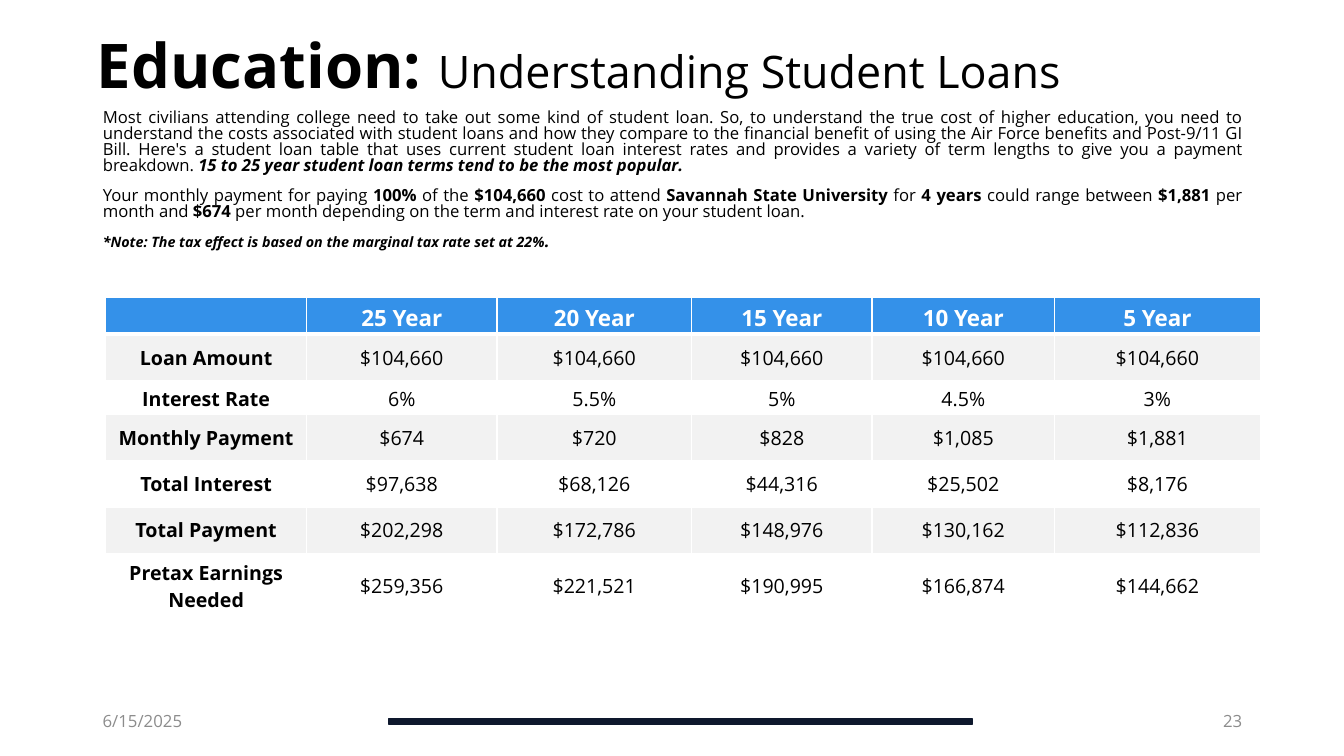
from pptx import Presentation
from pptx.dml.color import RGBColor
from pptx.enum.shapes import MSO_SHAPE
from pptx.enum.text import MSO_ANCHOR, MSO_AUTO_SIZE, PP_ALIGN
from pptx.oxml.ns import qn
from pptx.util import Inches, Pt
from lxml.etree import SubElement

FONT = "Open Sans"
COLORS = {
    "text": "000000",
    "muted": "8C8C8C",
    "bar": "0E182D",
    "header": "3491E9",
    "band": "F2F2F2",
    "white": "FFFFFF",
}

# Paragraphs are lists of (text, style); style letters: b bold, i italic
BODY_SIZE, NOTE_SIZE = 11.9, 10.2
INTRO = [
    ("Most civilians attending college need to take out some kind of student loan. "
     "So, to understand the true cost of higher education, you need to understand the "
     "costs associated with student loans and how they compare to the financial benefit "
     "of using the Air Force benefits and Post-9/11 GI Bill. Here's a student loan table "
     "that uses current student loan interest rates and provides a variety of term "
     "lengths to give you a payment breakdown. ", ""),
    ("15 to 25 year student loan terms tend to be the most popular.", "bi"),
]
PAYMENT = [
    ("Your monthly payment for paying ", ""), ("100%", "b"), (" of the ", ""),
    ("$104,660", "b"), (" cost to attend ", ""), ("Savannah State University", "b"),
    (" for ", ""), ("4 years", "b"), (" could range between ", ""), ("$1,881", "b"),
    (" per month and ", ""), ("$674", "b"),
    (" per month depending on the term and interest rate on your student loan.", ""),
]
NOTE = "*Note: The tax effect is based on the marginal tax rate set at 22%"

LOAN_ROWS = [
    ["", "25 Year", "20 Year", "15 Year", "10 Year", "5 Year"],
    ["Loan Amount"] + ["$104,660"] * 5,
    ["Interest Rate", "6%", "5.5%", "5%", "4.5%", "3%"],
    ["Monthly Payment", "$674", "$720", "$828", "$1,085", "$1,881"],
    ["Total Interest", "$97,638", "$68,126", "$44,316", "$25,502", "$8,176"],
    ["Total Payment", "$202,298", "$172,786", "$148,976", "$130,162", "$112,836"],
    ["Pretax Earnings Needed", "$259,356", "$221,521", "$190,995", "$166,874", "$144,662"],
]
COLUMN_WIDTHS = [1.99, 1.89, 1.93, 1.79, 1.81, 2.04]
ROW_HEIGHTS = [0.29, 0.46, 0.27, 0.46, 0.46, 0.46, 0.65]


def color(name):
    return RGBColor.from_string(COLORS[name])


def add_run(paragraph, text, size, style="", color_name="text"):
    run = paragraph.add_run()
    run.text = text
    font = run.font
    font.name, font.size = FONT, Pt(size)
    font.bold, font.italic = "b" in style, "i" in style
    font.color.rgb = color(color_name)


def place(shape, box):
    shape.left, shape.top, shape.width, shape.height = map(Inches, box)


def add_title(slide, box):
    title = slide.shapes.title
    place(title, box)
    frame = title.text_frame
    frame.auto_size = MSO_AUTO_SIZE.NONE
    frame.vertical_anchor = MSO_ANCHOR.MIDDLE
    paragraph = frame.paragraphs[0]
    paragraph.alignment = PP_ALIGN.LEFT
    paragraph.line_spacing = 0.9
    add_run(paragraph, "Education: ", 44, "b")
    add_run(paragraph, "Understanding Student Loans", 32)


def add_body(slide, box):
    body = slide.placeholders[1]
    place(body, box)
    frame = body.text_frame
    frame.auto_size = MSO_AUTO_SIZE.NONE
    note = [(NOTE, "bi", NOTE_SIZE), (".", "bi", BODY_SIZE)]
    sized = [[(*part, BODY_SIZE) for part in parts] for parts in (INTRO, PAYMENT)]
    for index, parts in enumerate(sized + [note]):
        paragraph = frame.add_paragraph() if index else frame.paragraphs[0]
        properties = paragraph._p.get_or_add_pPr()
        properties.set("marL", "0")
        properties.set("indent", "0")
        SubElement(properties, qn("a:buNone"))
        paragraph.alignment = PP_ALIGN.JUSTIFY
        paragraph.line_spacing = 0.8
        paragraph.space_before = Pt(10 if index else 0)
        for text, style, size in parts:
            add_run(paragraph, text, size, style)


def set_border(cell, side, width):
    line = SubElement(cell._tc.get_or_add_tcPr(), qn(f"a:ln{side}"), w=str(Pt(width)))
    fill = SubElement(line, qn("a:solidFill"))
    SubElement(fill, qn("a:srgbClr"), val=COLORS["white"])


def fill_cell(cell, text, row, column):
    header = row == 0
    size = 16 if header else 14
    # Borders: the line under the header is heavier
    for side in "LRTB":
        heavy = (header and side == "B") or (row == 1 and side == "T")
        set_border(cell, side, 3 if heavy else 1)
    cell.fill.solid()
    cell.fill.fore_color.rgb = color("header" if header else "band" if row % 2 else "white")
    cell.vertical_anchor = MSO_ANCHOR.MIDDLE
    paragraph = cell.text_frame.paragraphs[0]
    paragraph.alignment = PP_ALIGN.CENTER
    if text:
        add_run(paragraph, text, size, "b" if header or column == 0 else "",
                "white" if header else "text")
    else:
        SubElement(paragraph._p, qn("a:endParaRPr"), sz=str(size * 100))


def add_loan_table(slide, box):
    frame = slide.shapes.add_table(len(LOAN_ROWS), len(COLUMN_WIDTHS), *map(Inches, box))
    table = frame.table
    table.horz_banding = False
    for column, width in zip(table.columns, COLUMN_WIDTHS):
        column.width = Inches(width)
    for row, height in zip(table.rows, ROW_HEIGHTS):
        row.height = Inches(height)
    for row, values in enumerate(LOAN_ROWS):
        for column, text in enumerate(values):
            fill_cell(table.cell(row, column), text, row, column)


def add_footer(slide, box):
    left, top, width, height = box
    # Bar centred on the slide
    bar = slide.shapes.add_shape(MSO_SHAPE.RECTANGLE, Inches(left + 2.94),
                                 Inches(top + 0.18), Inches(5.78), Inches(0.06))
    bar.shadow.inherit = False
    bar.fill.solid()
    bar.fill.fore_color.rgb = color("bar")
    bar.line.color.rgb = color("bar")
    bar.line.width = Pt(1)
    # Date and slide number
    label_width = 3
    labels = [("6/15/2025", left, PP_ALIGN.LEFT),
              ("23", left + width - label_width, PP_ALIGN.RIGHT)]
    for text, label_left, alignment in labels:
        label = slide.shapes.add_textbox(Inches(label_left), Inches(top),
                                         Inches(label_width), Inches(height))
        frame = label.text_frame
        frame.word_wrap = True
        frame.vertical_anchor = MSO_ANCHOR.MIDDLE
        paragraph = frame.paragraphs[0]
        paragraph.alignment = alignment
        add_run(paragraph, text, 12, color_name="muted")


def main():
    presentation = Presentation()
    presentation.slide_width = Inches(13.33)
    presentation.slide_height = Inches(7.5)
    slide = presentation.slides.add_slide(presentation.slide_layouts[1])
    add_footer(slide, (0.92, 6.95, 11.5, 0.4))
    add_title(slide, (0.86, 0.04, 11.55, 1.27))
    add_body(slide, (0.92, 1.05, 11.5, 1.82))
    add_loan_table(slide, (1.05, 2.95, 11.45, sum(ROW_HEIGHTS)))
    presentation.save("out.pptx")


if __name__ == "__main__":
    main()
